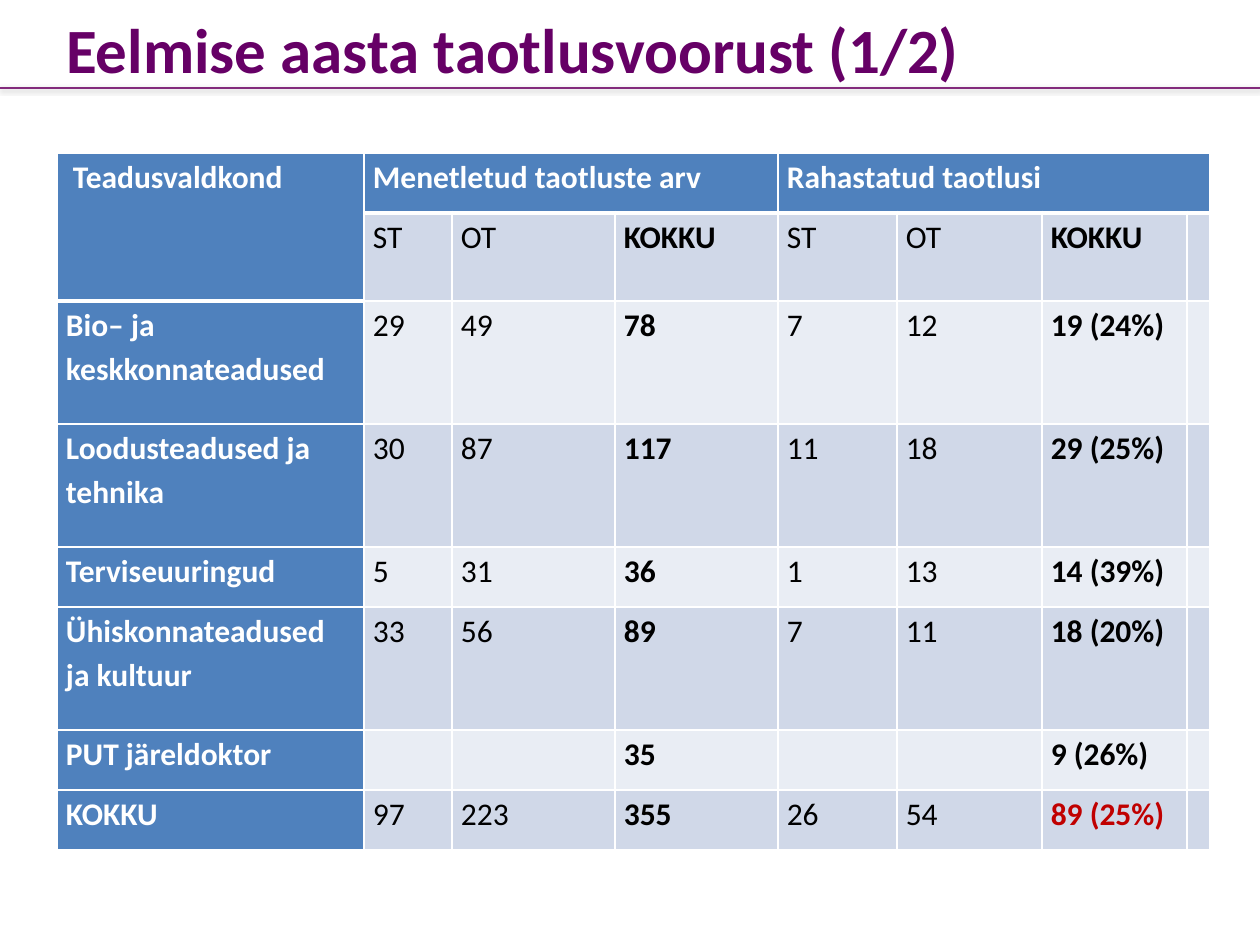
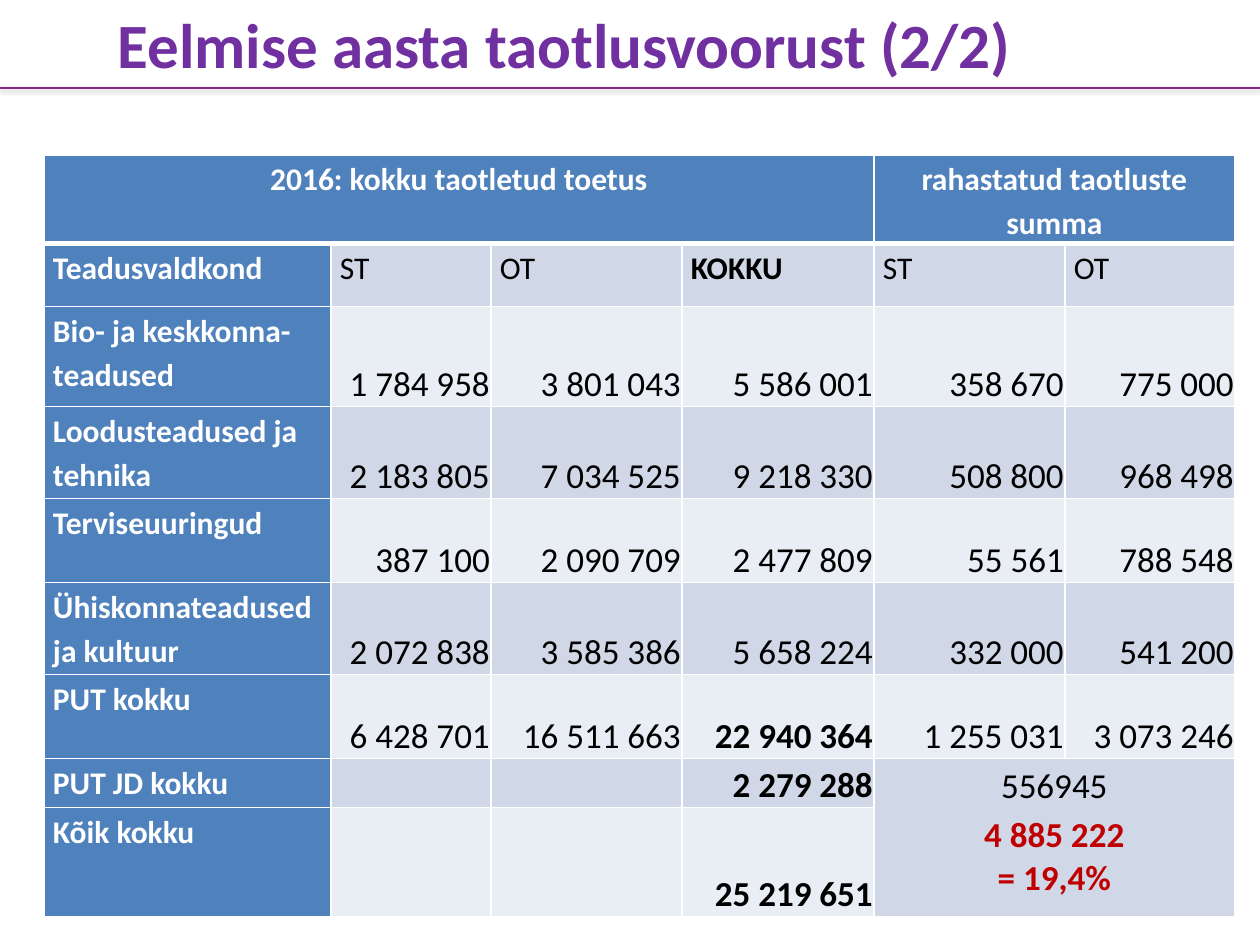
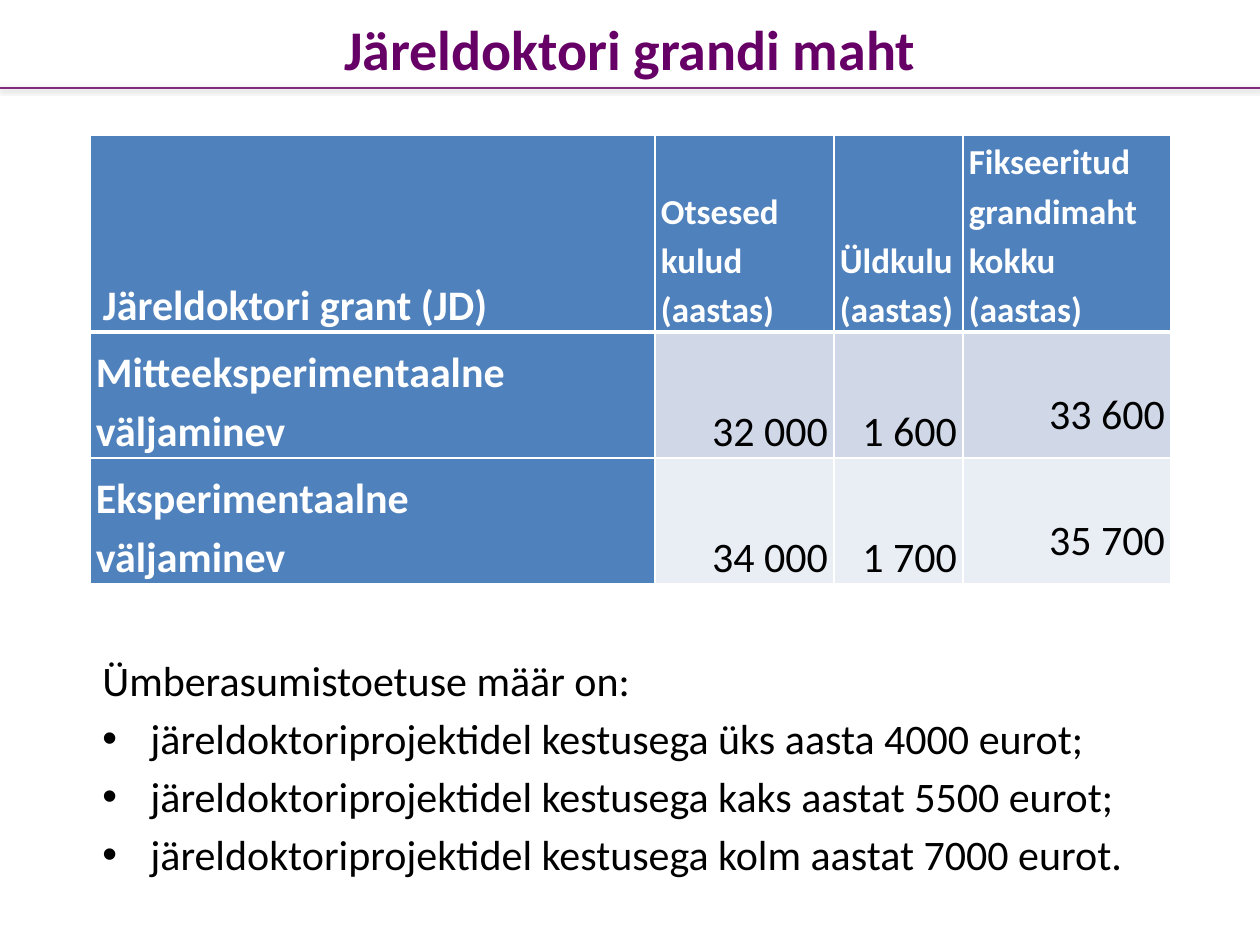
from lxml import etree
from pptx import Presentation
from pptx.dml.color import RGBColor
from pptx.enum.text import MSO_ANCHOR as ANCHOR, MSO_AUTO_SIZE as AUTO, PP_ALIGN as AL
from pptx.oxml import parse_xml
from pptx.oxml.ns import nsdecls, qn
from pptx.util import Emu, Pt

COLORS = {
    "plum": "660066", "violet": "7030A0", "rule": "832B7C",
    "head": "4F81BD", "band_dark": "D0D8E8", "band_light": "E9EDF4",
    "white": "FFFFFF", "black": "000000", "red": "C00000",
}
FONT = "Calibri"
PX_PER_INCH = 126
SLIDE_W, SLIDE_H = 1260, 945
RULE_Y = 88

APPLICATIONS = [
    "Teadusvaldkond|Menetletud taotluste arv|||Rahastatud taotlusi|||",
    "|ST|OT|KOKKU|ST|OT|KOKKU|",
    "Bio– ja keskkonnateadused|29|49|78|7|12|19 (24%)|",
    "Loodusteadused ja tehnika|30|87|117|11|18|29 (25%)|",
    "Terviseuuringud|5|31|36|1|13|14 (39%)|",
    "Ühiskonnateadused ja kultuur|33|56|89|7|11|18 (20%)|",
    "PUT järeldoktor|||35|||9 (26%)|",
    "KOKKU|97|223|355|26|54|89 (25%)|",
]
FUNDING = [
    "2016: kokku taotletud toetus||||rahastatud taotluste summa|",
    "Teadusvaldkond|ST|OT|KOKKU|ST|OT",
    "Bio- ja keskkonna-teadused|1 784 958|3 801 043|5 586 001|358 670|775 000",
    "Loodusteadused ja tehnika|2 183 805|7 034 525|9 218 330|508 800|968 498",
    "Terviseuuringud|387 100|2 090 709|2 477 809|55 561|788 548",
    "Ühiskonnateadused ja kultuur|2 072 838|3 585 386|5 658 224|332 000|541 200",
    "PUT kokku|6 428 701|16 511 663|22 940 364|1 255 031|3 073 246",
    "PUT JD kokku|||2 279 288|556945\n4 885 222\n= 19,4%|",
    "Kõik kokku|||25 219 651||",
]
GRANTS = [
    "Järeldoktori grant (JD)|Otsesed kulud (aastas)|Üldkulu (aastas)"
    "|Fikseeritud grandimaht kokku (aastas)",
    "Mitteeksperimentaalne väljaminev|32 000|1 600|33 600",
    "Eksperimentaalne\nväljaminev|34 000|1 700|35 700",
]
RELOCATION = [
    "Ümberasumistoetuse määr on:",
    "järeldoktoriprojektidel kestusega üks aasta 4000 eurot;",
    "järeldoktoriprojektidel kestusega kaks aastat 5500 eurot;",
    "järeldoktoriprojektidel kestusega kolm aastat 7000 eurot.",
]


def px(n):
    return Emu(round(n * 914400 / PX_PER_INCH))


def rgb(name):
    return RGBColor.from_string(COLORS[name])


def format_paragraph(p, size, color, bold=False, align=AL.LEFT, spacing=1.15):
    p.alignment, p.line_spacing = align, spacing
    for r in p.runs:
        for name, value in {"name": FONT, "size": Pt(size), "bold": bold}.items():
            setattr(r.font, name, value)
        r.font.color.rgb = rgb(color)


def add_title(s, box, text, size=36, color="plum"):
    title = s.shapes.title
    for name, n in zip(("left", "top", "width", "height"), box):
        setattr(title, name, px(n))
    tf = title.text_frame
    tf.text = text
    tf.auto_size = AUTO.NONE
    tf.vertical_anchor = ANCHOR.MIDDLE
    format_paragraph(tf.paragraphs[0], size, color, True, AL.CENTER, 1.0)


def add_layout_rule(s, layout):
    """Draw the shadowed rule under the title and move it to the layout."""
    line = s.shapes.add_connector(1, 0, px(RULE_Y), px(SLIDE_W), px(RULE_Y))
    line.line.color.rgb = rgb("rule")
    line.line.width = Pt(1)
    line.element.spPr.append(parse_xml(
        f'<a:effectLst {nsdecls("a")}><a:outerShdw blurRad="{Pt(3.1)}" '
        f'dist="{Pt(1)}" dir="5400000" rotWithShape="0">'
        f'<a:srgbClr val="{COLORS["black"]}"><a:alpha val="25000"/></a:srgbClr>'
        '</a:outerShdw></a:effectLst>'))
    layout.shapes.element.append(line.element)


def set_borders(cell, top, bottom):
    tc_pr = cell._tc.get_or_add_tcPr()
    for side, width in {"L": 1, "R": 1, "T": top, "B": bottom}.items():
        tc_pr.append(parse_xml(
            f'<a:ln{side} {nsdecls("a")} w="{Pt(width)}"><a:solidFill>'
            f'<a:srgbClr val="{COLORS["white"]}"/></a:solidFill></a:ln{side}>'))


def add_grid(s, left, top, cols, heights, rows, look, merges=(), tall_corner=False):
    """Add a table; look(row, col) gives what differs from the default cell."""
    frame = s.shapes.add_table(len(rows), len(cols), px(left), px(top),
                               px(sum(cols)), px(sum(heights)))
    table = frame.table
    table.first_row = table.horz_banding = False
    for col, width in zip(table.columns, cols):
        col.width = px(width)
    for row, height in zip(table.rows, heights):
        row.height = px(height)
    for i, line in enumerate(rows):
        for j, text in enumerate(line.split("|")):
            cell = table.cell(i, j)
            head_rows = 2 if tall_corner and j == 0 else 1
            is_head = i == 0 or j == 0
            band = "band_dark" if i % 2 else "band_light"
            set_borders(cell, 3 if i == head_rows else 1, 3 if i == head_rows - 1 else 1)
            cell.fill.solid()
            cell.fill.fore_color.rgb = rgb("head" if is_head else band)
            style = {"size": 18, "color": "white" if is_head else "black",
                     "bold": is_head, "margins": (9, 0, 9, 0), "anchor": ANCHOR.TOP}
            style.update(look(i, j))
            sides = ("margin_left", "margin_top", "margin_right", "margin_bottom")
            for side, n in zip(sides, style.pop("margins")):
                setattr(cell, side, px(n))
            cell.vertical_anchor = style.pop("anchor")
            cell.text_frame.text = text
            for p in cell.text_frame.paragraphs:
                format_paragraph(p, **style)
    for first, last in merges:
        table.cell(*first).merge(table.cell(*last))
    return table


def application_look(i, j):
    if (i, j) == (0, 0):
        return {"margins": (16, 0, 9, 0)}
    if i and j in (3, 6):
        return {"bold": True, "color": "red" if (i, j) == (7, 6) else "black"}
    return {}


def funding_look(i, j):
    if i == 0:
        return {"align": AL.CENTER}
    if i == 7 and j == 4:
        return {"size": 20, "align": AL.CENTER}
    if i > 1 and j:
        return {"size": 20, "bold": i > 5 and j == 3, "align": AL.RIGHT,
                "spacing": 1.0, "margins": (1, 1, 1, 0), "anchor": ANCHOR.BOTTOM}
    return {"bold": True} if j == 3 else {}


def grant_look(i, j):
    style = {"size": 24 if i or j == 0 else 20, "anchor": ANCHOR.BOTTOM,
             "margins": (6, 0, 6, 0), "align": AL.RIGHT if i and j else AL.JUSTIFY}
    if (i, j) == (0, 0):
        style["margins"] = (13, 0, 6, 0)
    elif i and j == 3:
        style["margins"] = (6, 0, 6, 17)
    return style


def add_bullet(p, indent):
    p_pr = p._p.get_or_add_pPr()
    p_pr.set("marL", str(px(indent)))
    p_pr.set("indent", str(-px(indent)))
    etree.SubElement(p_pr, qn("a:buFont")).set("typeface", "Arial")
    etree.SubElement(p_pr, qn("a:buChar")).set("char", "•")


def add_relocation_text(s, box):
    tf = s.shapes.add_textbox(*map(px, box)).text_frame
    tf.word_wrap = True
    tf.auto_size = AUTO.SHAPE_TO_FIT_TEXT
    tf.text = "\n".join(RELOCATION)
    for i, p in enumerate(tf.paragraphs):
        if i:
            add_bullet(p, 48)
        format_paragraph(p, 24, "black", align=AL.JUSTIFY)


def applications_slide(s):
    add_title(s, (-54, 0, 1134, 96), "Eelmise aasta taotlusvoorust (1/2)")
    add_grid(s, 57, 153, (307, 88, 163, 163, 119, 145, 145, 18),
             (60, 88, 123, 123, 60, 123, 60, 60), APPLICATIONS, application_look,
             [((0, 0), (1, 0)), ((0, 1), (0, 3)), ((0, 4), (0, 7))], tall_corner=True)


def funding_slide(s):
    add_title(s, (63, 0, 1003, 86), "Eelmise aasta taotlusvoorust (2/2)", color="violet")
    table = add_grid(s, 44, 155, (287, 160, 191, 192, 191, 170),
                     (88, 63, 100, 92, 84, 92, 84, 49, 109), FUNDING, funding_look,
                     [((0, 0), (0, 3)), ((0, 4), (0, 5)), ((7, 4), (8, 5))])
    total, share = table.cell(7, 4).text_frame.paragraphs[1:]
    format_paragraph(total, 20, "red", True, AL.CENTER)
    format_paragraph(share, 20, "red", True, AL.CENTER, 1.0)


def grants_slide(s):
    add_title(s, (63, 0, 1134, 96), "Järeldoktori grandi maht", 32)
    add_grid(s, 90, 135, (565, 179, 129, 208), (196, 126, 126), GRANTS, grant_look)
    add_relocation_text(s, (90, 641, 1081, 247))


def main():
    prs = Presentation()
    prs.slide_width, prs.slide_height = px(SLIDE_W), px(SLIDE_H)
    layout = prs.slide_layouts[5]
    for build in (applications_slide, funding_slide, grants_slide):
        build(prs.slides.add_slide(layout))
    add_layout_rule(prs.slides[0], layout)
    prs.save("out.pptx")


if __name__ == "__main__":
    main()
